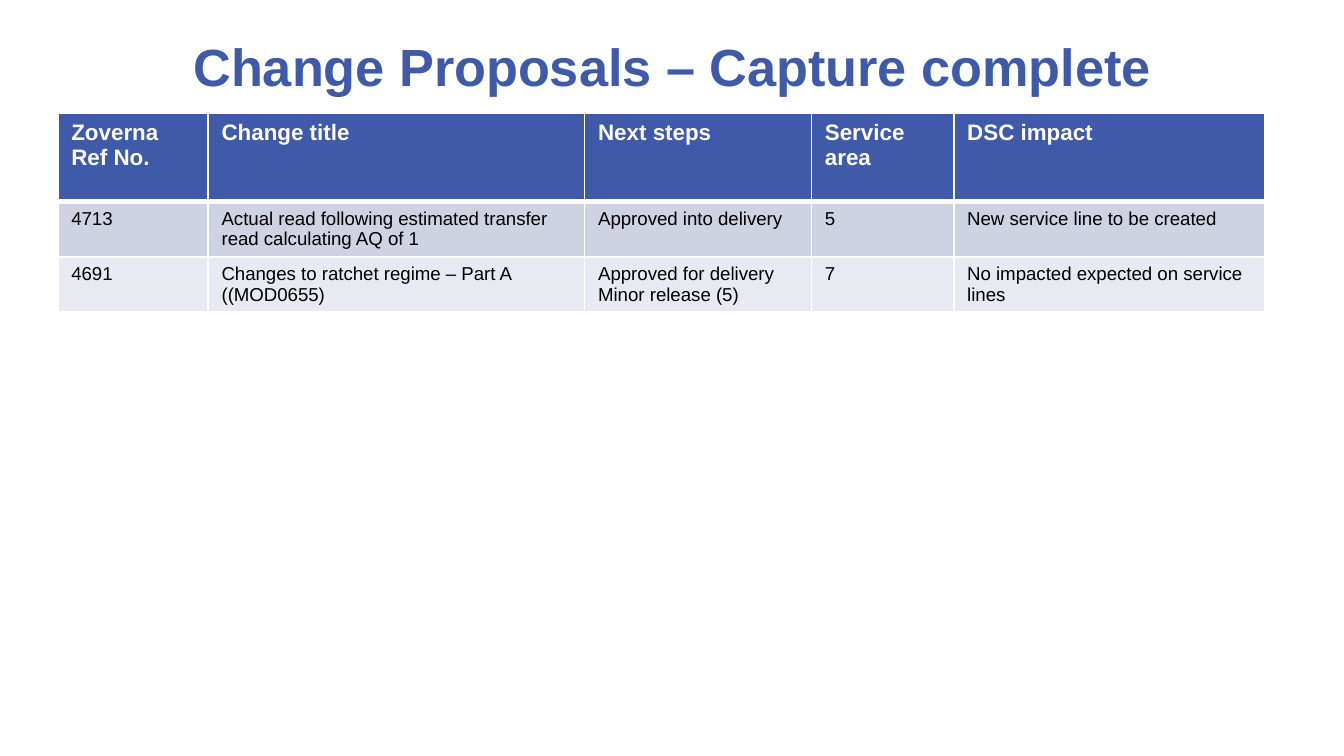
"""Build the slide listing change proposals whose capture is complete."""
from dataclasses import dataclass

from lxml.etree import SubElement
from pptx import Presentation
from pptx.dml.color import RGBColor
from pptx.enum.text import MSO_ANCHOR, MSO_AUTO_SIZE, PP_ALIGN
from pptx.oxml.ns import qn
from pptx.util import Pt

BLUE, WHITE, BLACK = "3E5AA8", "FFFFFF", "000000"


@dataclass(frozen=True)
class RowStyle:
    height: float
    fill: str
    color: str
    size: float
    bold: bool
    top: float
    bottom: float


@dataclass(frozen=True)
class TableRow:
    style: RowStyle
    texts: tuple[str, ...]


HEADER = RowStyle(47.5, BLUE, WHITE, 12, True, 1, 3)
ODD = RowStyle(29.5, "CED2E1", BLACK, 10, False, 3, 1)
EVEN = RowStyle(29.5, "E8EAF1", BLACK, 10, False, 1, 1)
COLUMNS = (80.5, 201.75, 121.5, 76.25, 166.5)
ROWS = (
    TableRow(HEADER, ("Zoverna Ref No.", "Change title", "Next steps",
                      "Service area", "DSC impact")),
    TableRow(ODD, ("4713",
                   "Actual read following estimated transfer read calculating AQ of 1",
                   "Approved into delivery", "5", "New service line to be created")),
    TableRow(EVEN, ("4691", "Changes to ratchet regime – Part A ((MOD0655)",
                    "Approved for delivery\nMinor release (5)", "7",
                    "No impacted expected on service lines")),
)


def rgb(value: str) -> RGBColor:
    return RGBColor.from_string(value)


def format_text(tf, size: float, color: str, bold: bool, align: PP_ALIGN) -> None:
    for p in tf.paragraphs:
        p.alignment = align
        for r in p.runs:
            values = {"name": "Arial", "size": Pt(size), "bold": bold}
            for name, value in values.items():
                setattr(r.font, name, value)
            r.font.color.rgb = rgb(color)


def add_borders(cell, style: RowStyle) -> None:
    tc_pr = cell._tc.get_or_add_tcPr()
    widths = {"a:lnL": 1, "a:lnR": 1, "a:lnT": style.top, "a:lnB": style.bottom}
    for tag, width in widths.items():
        ln = SubElement(tc_pr, qn(tag), w=str(Pt(width)))
        SubElement(SubElement(ln, qn("a:solidFill")), qn("a:srgbClr"), val=WHITE)


def draw_cell(cell, text: str, style: RowStyle) -> None:
    cell.text = text
    format_text(cell.text_frame, style.size, style.color, style.bold, PP_ALIGN.LEFT)
    add_borders(cell, style)
    cell.fill.solid()
    cell.fill.fore_color.rgb = rgb(style.fill)


def draw_title(s, text: str) -> None:
    sp = s.shapes.title
    box = {"left": 36, "top": 10, "width": 648, "height": 50.5}
    for name, value in box.items():
        setattr(sp, name, Pt(value))
    tf = sp.text_frame
    tf.text = text
    frame = {"vertical_anchor": MSO_ANCHOR.MIDDLE, "auto_size": MSO_AUTO_SIZE.NONE,
             "word_wrap": True}
    for name, value in frame.items():
        setattr(tf, name, value)
    format_text(tf, 28, BLUE, True, PP_ALIGN.CENTER)


def draw_table(s, left: float, top: float) -> None:
    height = sum(row.style.height for row in ROWS)
    table = s.shapes.add_table(len(ROWS), len(COLUMNS), Pt(left), Pt(top),
                               Pt(sum(COLUMNS)), Pt(height)).table
    table.horz_banding = False
    for column, width in zip(table.columns, COLUMNS):
        column.width = Pt(width)
    for table_row, row in zip(table.rows, ROWS):
        table_row.height = Pt(row.style.height)
        for cell, text in zip(table_row.cells, row.texts):
            draw_cell(cell, text, row.style)


def main() -> None:
    prs = Presentation()
    prs.slide_width, prs.slide_height = Pt(720), Pt(405)
    s = prs.slides.add_slide(prs.slide_layouts[5])
    draw_title(s, "Change Proposals – Capture complete")
    draw_table(s, 31, 60.5)
    prs.save("out.pptx")


if __name__ == "__main__":
    main()
